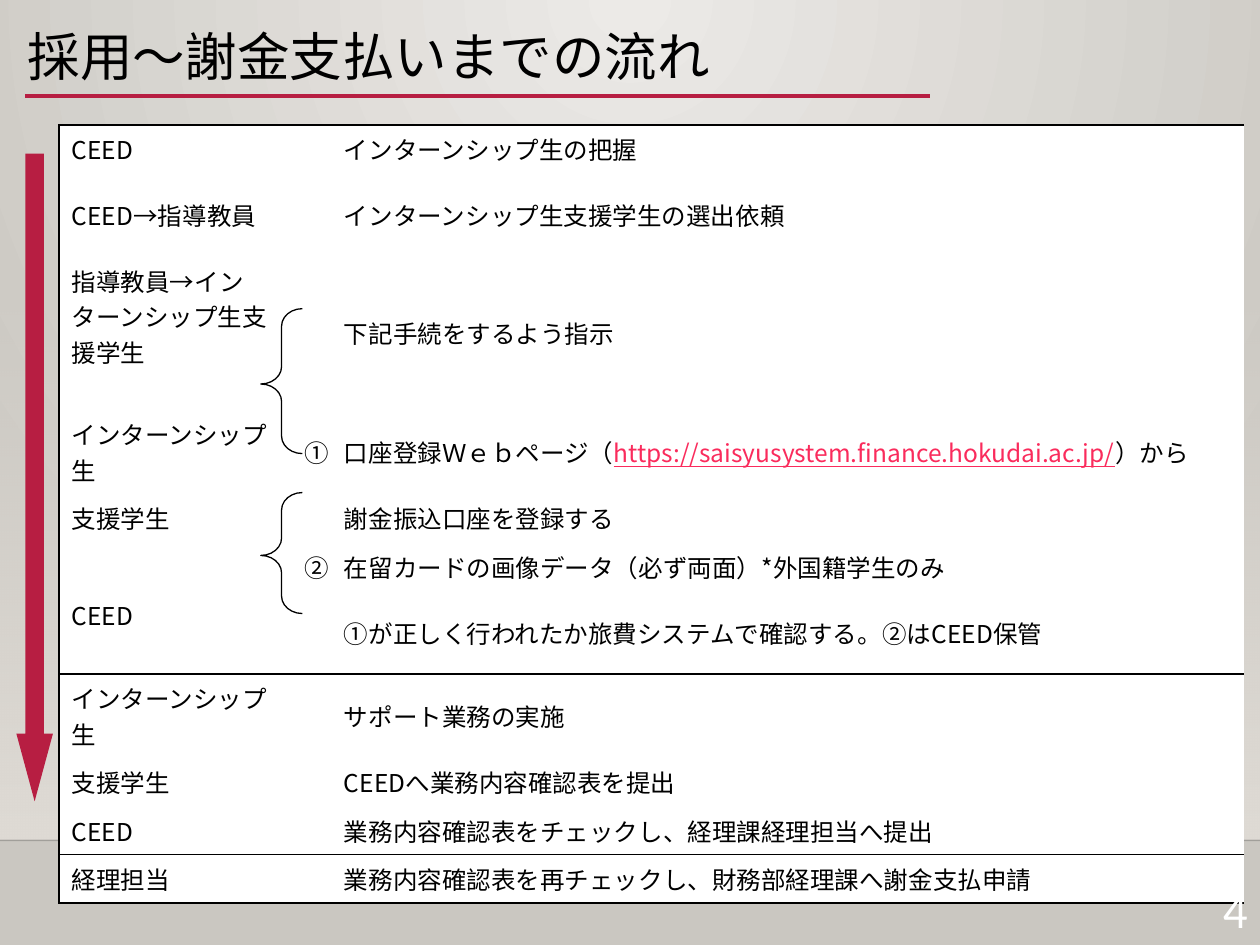
from lxml.etree import SubElement
from pptx import Presentation
from pptx.dml.color import RGBColor
from pptx.enum.shapes import MSO_CONNECTOR, MSO_SHAPE
from pptx.enum.text import MSO_ANCHOR, PP_ALIGN
from pptx.oxml import parse_xml
from pptx.oxml.ns import nsdecls, qn
from pptx.util import Inches, Pt

SANS = "Noto Sans CJK JP"
RED, BLACK, WHITE, PINK = "B71E42", "000000", "FFFFFF", "FA2B5C"
TITLE = "採用～謝金支払いまでの流れ"
LINK = "https://saisyusystem.finance.hokudai.ac.jp/"
ROWS = [
    ("CEED", "", "インターンシップ生の把握", 1),
    ("CEED→指導教員", "", "インターンシップ生支援学生の選出依頼", 2),
    ("指導教員→インターンシップ生支援学生", "", "下記手続をするよう指示", 4),
    ("インターンシップ生", "①", f"口座登録Ｗｅｂページ（{LINK}）から", 2),
    ("支援学生", "", "謝金振込口座を登録する", 1),
    ("", "②", "在留カードの画像データ（必ず両面）*外国籍学生のみ", 1),
    ("CEED", "", "①が正しく行われたか旅費システムで確認する。②はCEED保管", 2),
    ("インターンシップ生", "", "サポート業務の実施", 2),
    ("支援学生", "", "CEEDへ業務内容確認表を提出", 1),
    ("CEED", "", "業務内容確認表をチェックし、経理課経理担当へ提出", 1),
    ("経理担当", "", "業務内容確認表を再チェックし、財務部経理課へ謝金支払申請", 1),
]
COLS = [1.85, 0.31, 5.86, 1.38]
TOPS, ENDS = {0, 7, 10}, {6, 9, 10}
SPLIT, HIGH = {7, 8}, {2, 6}
BRACES = [(2.45, 1.15), (3.91, 0.96)]


def color(text):
    return RGBColor.from_string(text)


def style(para, size, font, tint):
    para.font.size = Pt(size)
    para.font.name = font
    para.font.color.rgb = color(tint)


def add_box(slide, text, box, size, font, tint, align):
    frame = slide.shapes.add_textbox(*map(Inches, box)).text_frame
    frame.word_wrap = True
    para = frame.paragraphs[0]
    para.text = text
    para.alignment = align
    style(para, size, font, tint)
    return para


def add_form(slide, kind, box, adjust=()):
    shape = slide.shapes.add_shape(kind, *map(Inches, box))
    shape.shadow.inherit = False
    shape.fill.background()
    shape.line.fill.background()
    for i, value in enumerate(adjust):
        shape.adjustments[i] = value
    return shape


def add_line(slide, start, end, tint, width):
    line = slide.shapes.add_connector(
        MSO_CONNECTOR.STRAIGHT, *map(Inches, start + end))
    line.line.color.rgb = color(tint)
    line.line.width = Pt(width)
    SubElement(line._element.spPr, qn("a:effectLst"))
    return line


def set_alpha(tint, value):
    SubElement(tint, qn("a:alpha")).set("val", str(value * 1000))


def paint(fill, first, last):
    fill.gradient()
    for stop, tint, place in zip(fill.gradient_stops, (first, last), (0, 1)):
        stop.color.rgb = color(tint)
        stop.position = place


def add_back(slide):
    fill = slide.background.fill
    paint(fill, "ECEAE7", "CAC7C1")
    grad = slide._element.find(".//" + qn("a:gradFill"))
    grad.remove(grad.find(qn("a:lin")))
    grad.append(parse_xml(
        f'<a:path {nsdecls("a")} path="circle">'
        '<a:fillToRect l="43000" t="0" r="43000" b="100000"/></a:path>'))
    veil = add_form(slide, MSO_SHAPE.RECTANGLE, (0, 2.2, 10, 4.46))
    paint(veil.fill, "DFDBD5", "DFDBD5")
    veil.fill.gradient_angle = 270
    set_alpha(veil._element.find(".//" + qn("a:srgbClr")), 0)
    floor = add_line(slide, (0, 6.67), (10, 6.67), "000001", 1)
    set_alpha(floor._element.find(".//" + qn("a:srgbClr")), 20)


def set_edges(cell, shown):
    props = cell._tc.get_or_add_tcPr()
    for i, side in enumerate("LRTB"):
        fill = "<a:noFill/>"
        if side in shown:
            fill = f'<a:solidFill><a:srgbClr val="{BLACK}"/></a:solidFill>'
        props.insert(i, parse_xml(
            f'<a:ln{side} {nsdecls("a")} w="12700">{fill}</a:ln{side}>'))


def fill_cell(cell, text, align):
    if not text:
        cell.margin_top = cell.margin_bottom = 0
        return
    para = cell.text_frame.paragraphs[0]
    para.alignment = align
    style(para, 14, SANS, BLACK)
    before, link, after = text.partition(LINK)
    for part in filter(None, (before, link, after)):
        run = para.add_run()
        run.text = part
        if part == LINK:
            run.font.color.rgb = color(PINK)
            run.font.underline = True


def add_flow(slide):
    tall = [0.1 + 0.28 * row[3] for row in ROWS]
    table = slide.shapes.add_table(
        len(ROWS), len(COLS), Inches(0.47), Inches(0.99),
        Inches(sum(COLS)), Inches(sum(tall))).table
    table.first_row = table.horz_banding = False
    for col, width in zip(table.columns, COLS):
        col.width = Inches(width)
    for r, (who, mark, task, _) in enumerate(ROWS):
        table.rows[r].height = Inches(tall[r])
        for c, text in enumerate((who, mark, task, "")):
            cell = table.cell(r, c)
            cell.fill.solid()
            cell.fill.fore_color.rgb = color(WHITE)
            top = c == 0 and r in HIGH
            cell.vertical_anchor = MSO_ANCHOR.TOP if top else MSO_ANCHOR.MIDDLE
            fill_cell(cell, text, PP_ALIGN.RIGHT if c == 1 else PP_ALIGN.LEFT)
            set_edges(cell, "L" * (c == 0) + "T" * (r in TOPS) + "B" * (r in ENDS))
        if r not in SPLIT:
            table.cell(r, 2).merge(table.cell(r, 3))


def main():
    deck = Presentation()
    deck.slide_width, deck.slide_height = Inches(10), Inches(7.5)
    slide = deck.slides.add_slide(deck.slide_layouts[6])
    add_back(slide)
    add_line(slide, (0.2, 0.76), (7.38, 0.76), RED, 2.5)
    add_flow(slide)
    arrow = add_form(slide, MSO_SHAPE.DOWN_ARROW, (0.13, 1.22, 0.29, 5.14), (0.5, 1.85))
    arrow.fill.solid()
    arrow.fill.fore_color.rgb = color(RED)
    title = add_box(slide, TITLE, (0.12, 0.2, 9.88, 1.15), 30, SANS, BLACK, PP_ALIGN.LEFT)
    title.line_spacing = 0.9
    for top, high in BRACES:
        brace = add_form(slide, MSO_SHAPE.LEFT_BRACE, (2.07, top, 0.33, high), (0.42, 0.52))
        brace.line.color.rgb = color(BLACK)
        brace.line.width = Pt(0.75)
    add_box(slide, "4", (9.13, 6.93, 0.87, 0.55), 28, "Calibri", WHITE, PP_ALIGN.RIGHT)
    deck.save("out.pptx")


if __name__ == "__main__":
    main()
